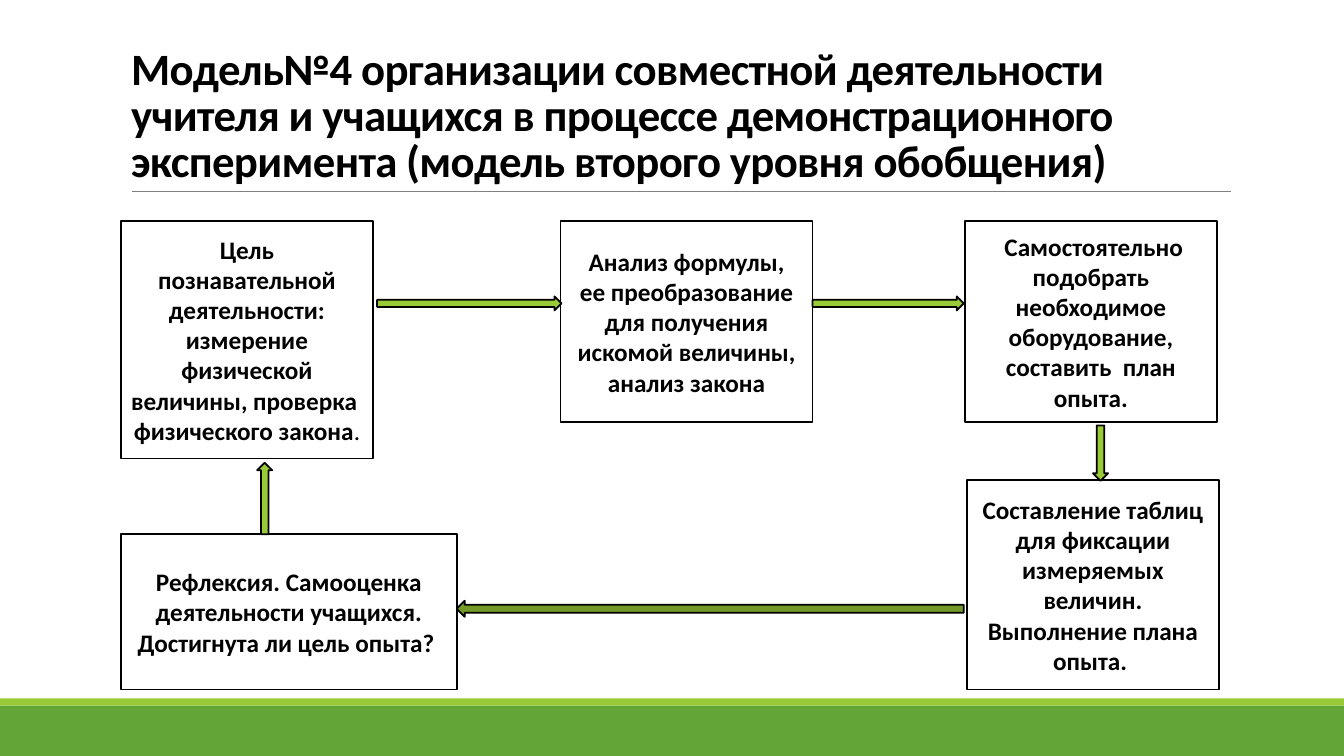
"""Build the slide with the cyclic model of a demonstration experiment."""
from pptx import Presentation
from pptx.dml.color import RGBColor
from pptx.enum.shapes import MSO_CONNECTOR, MSO_SHAPE as SHAPE
from pptx.enum.text import MSO_ANCHOR as ANCHOR, PP_ALIGN as ALIGN
from pptx.oxml.ns import qn
from pptx.util import Inches, Pt
from lxml import etree

BLACK = RGBColor(0x00, 0x00, 0x00)
WHITE = RGBColor(0xFF, 0xFF, 0xFF)
GRAY = RGBColor(0x80, 0x80, 0x80)
GREEN = RGBColor(0x63, 0xA5, 0x37)
LIME = RGBColor(0x99, 0xCB, 0x38)
OLIVE = RGBColor(0x73, 0x9A, 0x28)

TITLE = ("Модель№4 организации совместной деятельности учителя и учащихся "
         "в процессе демонстрационного эксперимента (модель второго уровня обобщения)")

STAGES = [
    ((1.2, 2.19, 2.5, 2.36),
     [[("Цель познавательной деятельности: измерение физической величины, "
        "проверка  физического закона", True), (".", False)]]),
    ((5.56, 2.19, 2.5, 2),
     [[("Анализ формулы,", True)],
      [("ее преобразование для получения искомой величины, анализ закона", True)]]),
    ((9.57, 2.19, 2.5, 2),
     [[(" ", False), ("Самостоятельно подобрать необходимое оборудование, "
                      "составить  план опыта.", True)]]),
    ((1.2, 5.3, 3.33, 1.54),
     [[("Рефлексия. Самооценка деятельности учащихся. "
        "Достигнута ли цель опыта? ", True)]]),
    ((9.59, 4.76, 2.5, 2.08),
     [[("Составление таблиц для фиксации измеряемых величин. "
        "Выполнение плана опыта. ", True)]]),
]

ARROWS = [
    (SHAPE.RIGHT_ARROW, (8.06, 2.94, 1.5, 0.14), LIME),
    (SHAPE.RIGHT_ARROW, (3.74, 2.94, 1.83, 0.14), LIME),
    (SHAPE.DOWN_ARROW, (10.84, 4.22, 0.15, 0.55), LIME),
    (SHAPE.LEFT_ARROW, (4.53, 5.96, 5.03, 0.16), OLIVE),
    (SHAPE.UP_ARROW, (2.55, 4.59, 0.15, 0.71), LIME),
]


def add_figure(slide, kind, box, fill, outline=None):
    """Add a flat preset shape, outlined only when a colour is given."""
    figure = slide.shapes.add_shape(kind, *map(Inches, box))
    figure.shadow.inherit = False
    figure.fill.solid()
    figure.fill.fore_color.rgb = fill
    if outline is None:
        figure.line.fill.background()
    else:
        figure.line.color.rgb = outline
        figure.line.width = Pt(1.25)
    return figure


def set_font(paragraph, size):
    """Give a paragraph the bold black Calibri of the slide."""
    paragraph.font.name = "Calibri"
    paragraph.font.size = Pt(size)
    paragraph.font.bold = True
    paragraph.font.color.rgb = BLACK


def add_footer(slide, left, top, width, height):
    """Draw the lime strip and the green band below it."""
    strip = 0.07
    add_figure(slide, SHAPE.RECTANGLE, (left, top + strip, width, height - strip), GREEN)
    add_figure(slide, SHAPE.RECTANGLE, (left, top, width, strip), LIME)


def add_title(slide, left, top, width, height):
    """Place the title and the rule under it."""
    title = slide.shapes.title
    title.left, title.top, title.width, title.height = map(Inches, (left, top, width, height))
    frame = title.text_frame
    frame.text = TITLE
    frame.word_wrap = True
    frame.vertical_anchor = ANCHOR.BOTTOM
    heading = frame.paragraphs[0]
    heading.alignment = ALIGN.LEFT
    heading.line_spacing = 0.85
    set_font(heading, 32)
    heading.runs[0].font._element.set("spc", "-50")

    bottom = Inches(top + height)
    rule = slide.shapes.add_connector(MSO_CONNECTOR.STRAIGHT, Inches(left + 0.11), bottom,
                                      Inches(left + width + 0.01), bottom)
    rule.line.color.rgb = GRAY
    rule.line.width = Pt(0.5)
    etree.SubElement(rule._element.spPr, qn("a:effectLst"))


def add_stage(slide, box, paragraphs):
    """Draw one stage of the model with its centred text."""
    frame = add_figure(slide, SHAPE.RECTANGLE, box, WHITE, BLACK).text_frame
    frame.word_wrap = True
    frame.vertical_anchor = ANCHOR.MIDDLE
    for index, parts in enumerate(paragraphs):
        paragraph = frame.add_paragraph() if index else frame.paragraphs[0]
        paragraph.alignment = ALIGN.CENTER
        set_font(paragraph, 18)
        for text, bold in parts:
            run = paragraph.add_run()
            run.text = text
            run.font.color.rgb = BLACK
            if not bold:
                run.font.bold = False


def main():
    """Assemble and save the slide."""
    deck = Presentation()
    deck.slide_width, deck.slide_height = Inches(13.33), Inches(7.5)
    slide = deck.slides.add_slide(deck.slide_layouts[5])
    add_footer(slide, 0, 6.93, 13.33, 0.57)
    add_title(slide, 1.2, 0.31, 11, 1.59)
    for box, paragraphs in STAGES:
        add_stage(slide, box, paragraphs)
    for kind, box, fill in ARROWS:
        add_figure(slide, kind, box, fill, BLACK)
    deck.save("out.pptx")


if __name__ == "__main__":
    main()
